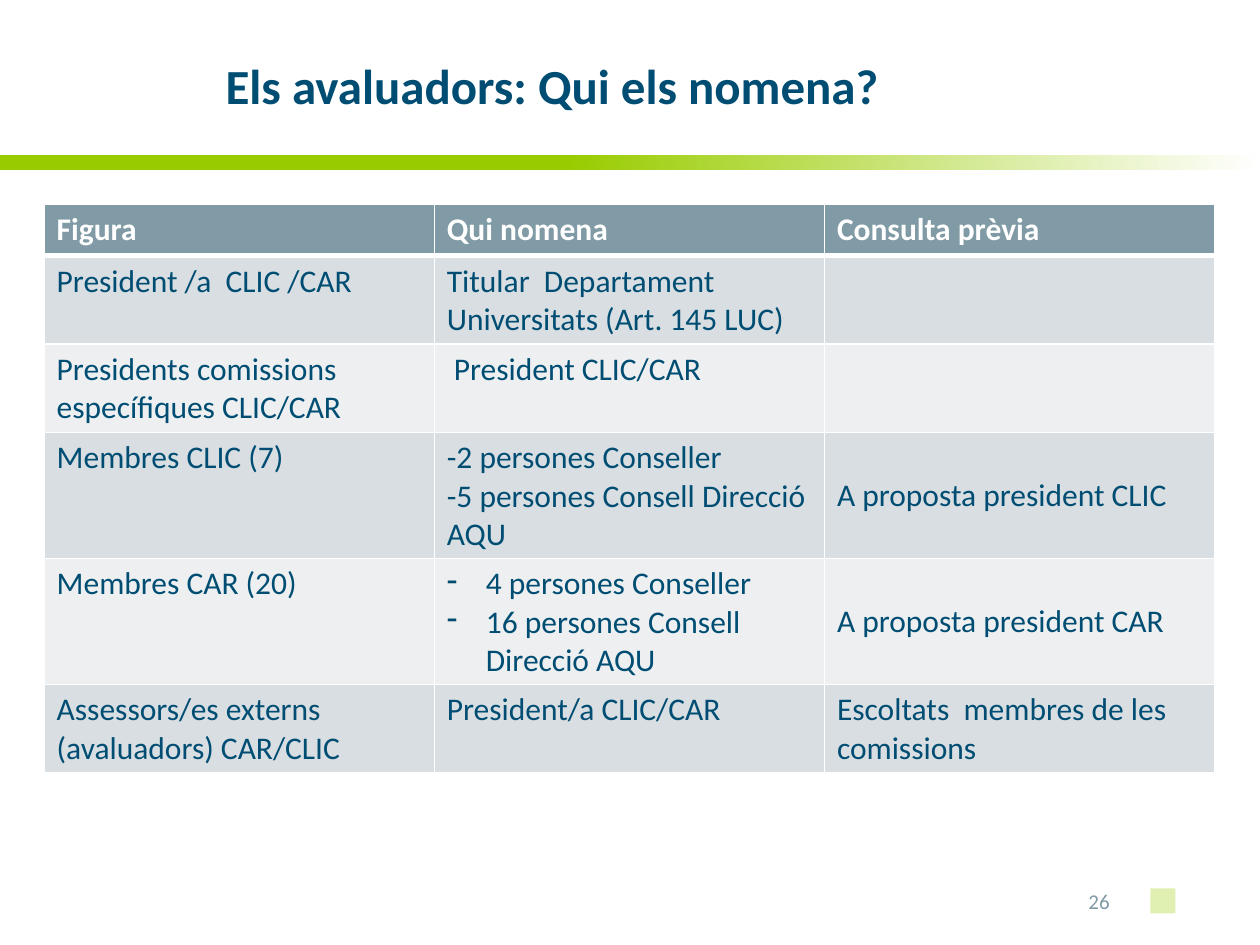
"""Build the slide on who appoints the evaluators."""
from lxml.etree import SubElement
from pptx import Presentation
from pptx.dml.color import RGBColor
from pptx.enum.shapes import MSO_SHAPE
from pptx.enum.text import MSO_ANCHOR, PP_ALIGN
from pptx.oxml.ns import qn
from pptx.util import Inches, Pt

HUES = {"navy": "004D73", "slate": "809BA5", "lime": "99CC00",
        "white": "FFFFFF", "dark": "D8DEE1", "light": "EDEFF0"}
FORMS = {
    "title": {"size": Pt(28), "bold": True, "name": "Calibri"},
    "head": {"size": Pt(18), "bold": True, "name": "Calibri"},
    "body": {"size": Pt(18), "bold": False, "name": "Calibri"},
    "page": {"size": Pt(12), "bold": False, "name": "Calibri"},
}
ROWS = [
    ["Figura", "Qui nomena", "Consulta prèvia"],
    ["President /a  CLIC /CAR",
     "Titular  Departament Universitats (Art. 145 LUC)", ""],
    ["Presidents comissions específiques CLIC/CAR", " President CLIC/CAR", ""],
    ["Membres CLIC (7)",
     "-2 persones Conseller\n-5 persones Consell Direcció AQU",
     "A proposta president CLIC"],
    ["Membres CAR (20)",
     "- 4 persones Conseller\n- 16 persones Consell Direcció AQU",
     "A proposta president CAR"],
    ["Assessors/es externs (avaluadors) CAR/CLIC", "President/a CLIC/CAR",
     "Escoltats  membres de les comissions"],
]


def write(para, text, form, hue):
    run = para.add_run()
    run.text = text
    for key, value in FORMS[form].items():
        setattr(run.font, key, value)
    run.font.color.rgb = RGBColor.from_string(HUES[hue])


def edge(cell, side, width):
    line = SubElement(cell._tc.get_or_add_tcPr(), qn(f"a:ln{side}"), w=str(Pt(width)))
    fill = SubElement(line, qn("a:solidFill"))
    SubElement(fill, qn("a:srgbClr"), val=HUES["white"])


deck = Presentation()
deck.slide_width, deck.slide_height = Inches(10), Inches(7.5)
slide = deck.slides.add_slide(deck.slide_layouts[5])
shapes = slide.shapes

band = shapes.add_shape(MSO_SHAPE.RECTANGLE, 0, Inches(1.23), Inches(10), Inches(0.12))
band.fill.gradient()
band.fill.gradient_angle = 0
for stop, place, hue in zip(band.fill.gradient_stops, (0.45, 1), ("lime", "white")):
    stop.position = place
    stop.color.rgb = RGBColor.from_string(HUES[hue])

mark = shapes.add_shape(MSO_SHAPE.RECTANGLE, Inches(9.13), Inches(7.05),
                        Inches(0.2), Inches(0.2))
mark.fill.solid()
mark.fill.fore_color.rgb = RGBColor.from_string(HUES["lime"])
tint = mark._element.spPr.find(qn("a:solidFill")).find(qn("a:srgbClr"))
SubElement(tint, qn("a:alpha"), val="30000")
for shape in (band, mark):
    shape.line.fill.background()
    shape.shadow.inherit = False

page = shapes.add_textbox(Inches(8.54), Inches(6.95), Inches(0.55), Inches(0.4))
page.text_frame.word_wrap = True
page.text_frame.vertical_anchor = MSO_ANCHOR.MIDDLE
write(page.text_frame.paragraphs[0], "26", "page", "slate")

title = shapes.title
title.left, title.top = Inches(1.69), Inches(0.36)
title.width, title.height = Inches(7.64), Inches(0.63)
title.text_frame.vertical_anchor = MSO_ANCHOR.MIDDLE
lead = title.text_frame.paragraphs[0]
lead.alignment = PP_ALIGN.LEFT
write(lead, "Els avaluadors: Qui els nomena?", "title", "navy")

frame = shapes.add_table(len(ROWS), 3, Inches(0.35), Inches(1.62),
                         Inches(9.29), Inches(4.51))
table = frame.table
for row in table.rows:
    row.height = Inches(0.41)
frame.height = Inches(4.51)

for i, row in enumerate(ROWS):
    form, ink = ("body", "navy") if i else ("head", "white")
    back = ("light", "dark")[i % 2] if i else "slate"
    for j, text in enumerate(row):
        cell = table.cell(i, j)
        for side in "LRTB":
            thick = (i, side) in ((0, "B"), (1, "T"))
            edge(cell, side, 3 if thick else 1)
        cell.fill.solid()
        cell.fill.fore_color.rgb = RGBColor.from_string(HUES[back])
        if text.startswith("A proposta"):
            cell.vertical_anchor = MSO_ANCHOR.MIDDLE
        for n, line in enumerate(text.split("\n")):
            para = cell.text_frame.add_paragraph() if n else cell.text_frame.paragraphs[0]
            if line.startswith("- "):
                props = para._p.get_or_add_pPr()
                props.set("marL", str(Inches(0.31)))
                props.set("indent", str(Inches(-0.31)))
                SubElement(props, qn("a:buFontTx"))
                SubElement(props, qn("a:buChar"), char="-")
            if line:
                write(para, line.removeprefix("- "), form, ink)

deck.save("out.pptx")
